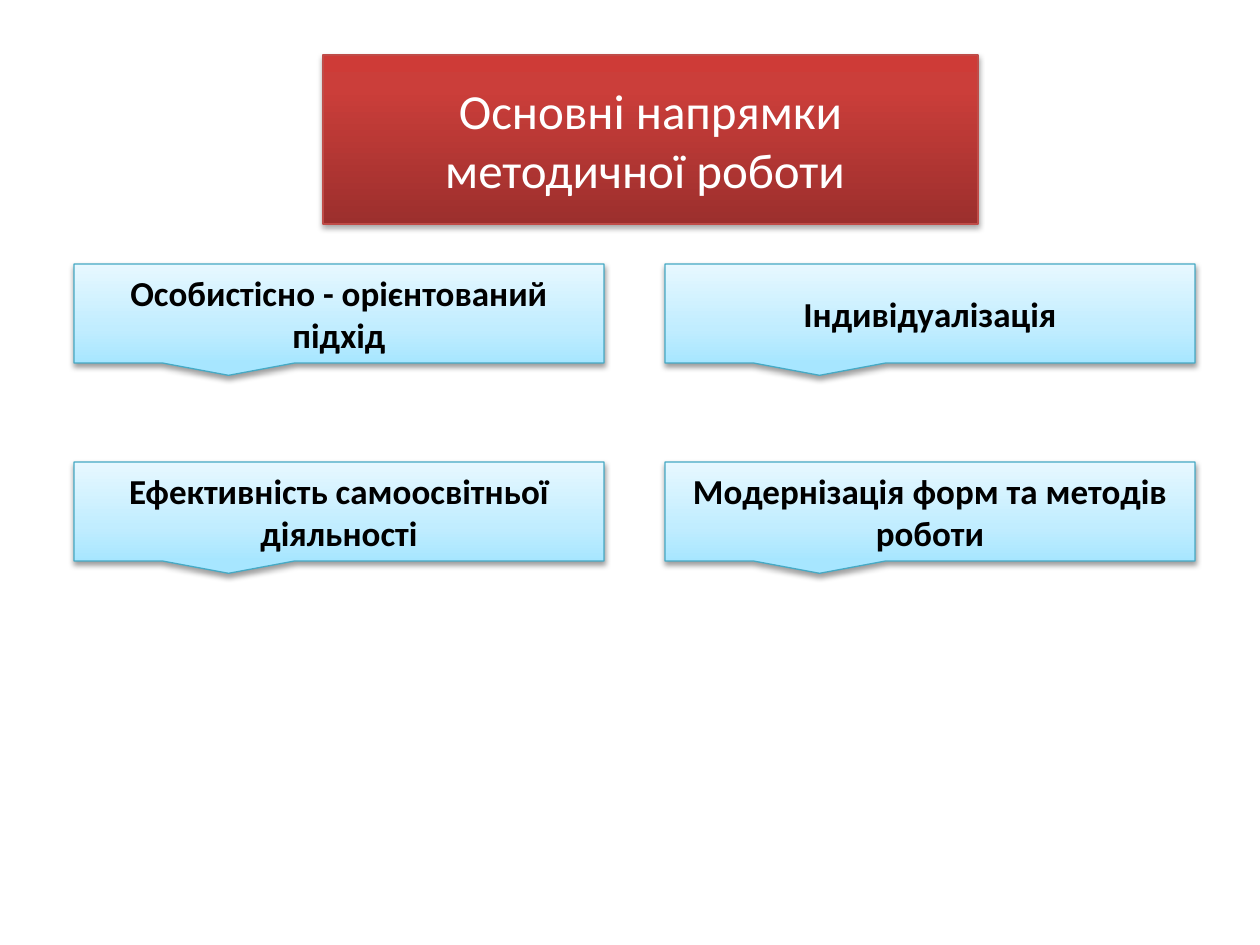
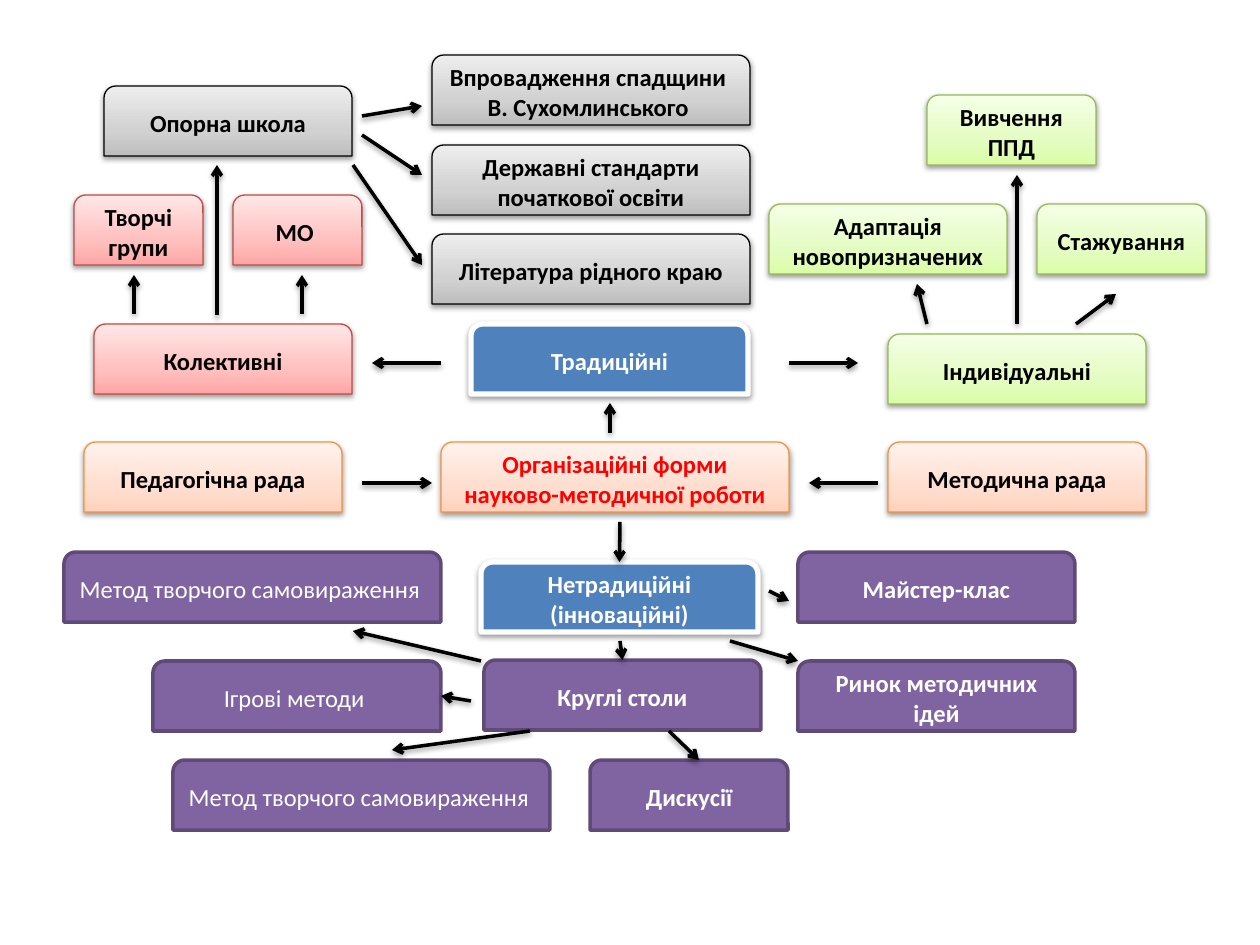
from dataclasses import dataclass, replace

from lxml import etree
from pptx import Presentation
from pptx.dml.color import RGBColor
from pptx.enum.shapes import MSO_CONNECTOR, MSO_SHAPE
from pptx.enum.text import MSO_ANCHOR, MSO_AUTO_SIZE, PP_ALIGN
from pptx.oxml.ns import qn
from pptx.util import Emu, Inches, Pt

CALLOUT = MSO_SHAPE.RECTANGULAR_CALLOUT
TAB = MSO_SHAPE.ROUND_2_SAME_RECTANGLE
STRAIGHT = MSO_CONNECTOR.STRAIGHT
MIDDLE = MSO_ANCHOR.MIDDLE
NO_AUTOFIT = MSO_AUTO_SIZE.NONE
CENTER, LEFT = PP_ALIGN.CENTER, PP_ALIGN.LEFT

FONT = "Calibri"
PX = 914400 / 126
TITLE_ONLY, BLANK = 5, 6
TOP, RIGHT_SIDE = 0, 3
NODE_HEIGHT = 70

BLACK = RGBColor(0x00, 0x00, 0x00)
WHITE = RGBColor(0xFF, 0xFF, 0xFF)
RED = RGBColor(0xFF, 0x00, 0x00)
CRIMSON = RGBColor(0xBF, 0x4C, 0x48)
TEAL = RGBColor(0x46, 0xAA, 0xC5)
ORANGE = RGBColor(0xF6, 0x92, 0x40)
OLIVE = RGBColor(0x98, 0xB9, 0x55)
BLUE = RGBColor(0x4F, 0x81, 0xBD)
PURPLE = RGBColor(0x80, 0x64, 0xA2)
DARK_PURPLE = RGBColor(0x5F, 0x4A, 0x78)


@dataclass(frozen=True)
class Style:
    """Look of a box: one fill colour or gradient stops, outline, text and shadow."""
    fill: tuple
    outline: RGBColor
    weight: float = 0.75
    ink: RGBColor = BLACK
    size: int = 14
    bold: bool = True
    align: int = CENTER
    shadow: tuple = (38, 20000)


def pale(bottom, middle, top):
    """Return the stops of a pale gradient that runs from bottom to top."""
    return ((0, bottom), (35, middle), (100, top))


BANNER = Style(((0, "9C2F2D"), (80, "CB3E3A"), (100, "CE3B37")), CRIMSON,
               ink=WHITE, size=28, bold=False, shadow=(35, 23000))
CARD = Style(pale("A7E6FF", "C1EDFF", "E7F8FF"), TEAL, size=20)
COUNCIL = Style(pale("FFD2BD", "FFDED0", "FFF2ED"), ORANGE)
CORE = replace(COUNCIL, ink=RED)
INDIVIDUAL = Style(pale("DAFDA7", "E4FCC2", "F5FFE7"), OLIVE)
COLLECTIVE = Style(pale("FFA6A5", "FFC0BF", "FFE7E7"), CRIMSON)
SCHOOL = Style(pale("BDBDBD", "D1D1D1", "EEEEEE"), BLACK)
BRANCH = Style((BLUE,), WHITE, 3, ink=WHITE)
METHOD = Style((PURPLE,), DARK_PURPLE, 2, ink=WHITE, shadow=())
PLAIN_METHOD = replace(METHOD, bold=False)
LEFT_METHOD = replace(PLAIN_METHOD, align=LEFT)

DIRECTIONS = [
    ["Особистісно - орієнтований підхід", "Індивідуалізація"],
    ["Ефективність самоосвітньої діяльності", "Модернізація форм та методів роботи"],
]

NODES = [
    (CORE, 441, 442, 348, "Організаційні форми науково-методичної роботи"),
    (COUNCIL, 84, 442, 258, "Педагогічна рада"),
    (COUNCIL, 888, 442, 258, "Методична рада"),
    (BRANCH, 471, 324, 277, "Традиційні"),
    (INDIVIDUAL, 888, 334, 258, "Індивідуальні"),
    (INDIVIDUAL, 1037, 204, 169, "Стажування"),
    (INDIVIDUAL, 769, 204, 238, "Адаптація новопризначених"),
    (INDIVIDUAL, 927, 95, 169, "Вивчення ППД"),
    (COLLECTIVE, 94, 324, 258, "Колективні"),
    (COLLECTIVE, 74, 195, 129, "Творчі групи"),
    (COLLECTIVE, 233, 195, 129, "МО "),
    (SCHOOL, 104, 86, 248, "Опорна школа"),
    (SCHOOL, 432, 55, 318, "Впровадження спадщини \nВ. Сухомлинського "),
    (SCHOOL, 432, 145, 318, "Державні стандарти початкової освіти"),
    (SCHOOL, 432, 234, 318, "Література рідного краю"),
    (METHOD, 798, 661, 277, "Ринок методичних ідей"),
    (METHOD, 798, 552, 277, "Майстер-клас"),
    (LEFT_METHOD, 173, 760, 377, "Метод творчого самовираження"),
    (LEFT_METHOD, 64, 552, 377, "Метод творчого самовираження"),
    (METHOD, 590, 760, 198, "Дискусії"),
]

ARROWS = [
    (362, 483, 432, 483), (878, 483, 809, 483),
    (789, 363, 858, 363), (441, 363, 372, 363), (610, 433, 610, 403),
    (927, 324, 917, 284), (1076, 324, 1116, 294), (1017, 324, 1017, 175),
    (134, 314, 134, 275), (302, 314, 302, 275), (217, 315, 217, 165),
    (362, 116, 422, 106), (362, 135, 422, 175), (353, 165, 422, 265),
    (481, 661, 353, 631), (769, 591, 789, 601), (730, 641, 798, 661),
    (669, 731, 699, 760), (530, 731, 392, 750),
]


def px(*lengths):
    """Turn pixel lengths into EMU."""
    return [Emu(round(length * PX)) for length in lengths]


def add_effects(shape, shadow):
    """Replace the theme shadow by a downward one, or by none."""
    effects = etree.SubElement(shape._element.spPr, qn("a:effectLst"))
    if shadow:
        opacity, distance = shadow
        outer = etree.SubElement(effects, qn("a:outerShdw"), blurRad="40000",
                                 dist=str(distance), dir="5400000", rotWithShape="0")
        colour = etree.SubElement(outer, qn("a:srgbClr"), val=str(BLACK))
        etree.SubElement(colour, qn("a:alpha"), val=str(opacity * 1000))


def fill_gradient(shape, stops):
    """Fill a shape with a vertical gradient of any number of stops."""
    shape.fill.gradient()
    shape.fill.gradient_angle = 90
    stop_list = shape._element.spPr.find(qn("a:gradFill")).find(qn("a:gsLst"))
    for old_stop in list(stop_list):
        stop_list.remove(old_stop)
    for position, colour in stops:
        stop = etree.SubElement(stop_list, qn("a:gs"), pos=str(position * 1000))
        etree.SubElement(stop, qn("a:srgbClr"), val=colour)


def write_text(box, text, style):
    """Write one paragraph per line of text in the middle of a box."""
    frame = box.text_frame
    frame.word_wrap = True
    frame.auto_size = NO_AUTOFIT
    frame.vertical_anchor = MIDDLE
    for index, line in enumerate(text.split("\n")):
        para = frame.add_paragraph() if index else frame.paragraphs[0]
        para.alignment = style.align
        span = para.add_run()
        span.text = line
        span.font.name = FONT
        span.font.size = Pt(style.size)
        span.font.bold = style.bold
        span.font.color.rgb = style.ink


def dress(box, text, style):
    """Give a box its fill, outline, shadow and text."""
    if len(style.fill) == 1:
        box.fill.solid()
        box.fill.fore_color.rgb = style.fill[0]
    else:
        fill_gradient(box, style.fill)
    box.line.color.rgb = style.outline
    box.line.width = Pt(style.weight)
    add_effects(box, style.shadow)
    write_text(box, text, style)


def add_banner_title(page, left, top, width, height, text):
    """Shape the title placeholder as a rounded banner."""
    title = page.shapes.title
    title.left, title.top, title.width, title.height = px(left, top, width, height)
    outline = etree.SubElement(title._element.spPr, qn("a:prstGeom"), prst="roundRect")
    etree.SubElement(outline, qn("a:avLst"))
    dress(title, text, BANNER)


def add_card(page, left, top, text):
    """Add a callout that names one direction."""
    dress(page.shapes.add_shape(CALLOUT, *px(left, top, 530, 99)), text, CARD)


def add_node(page, style, left, top, width, text):
    """Add a box of the scheme and return it."""
    box = page.shapes.add_shape(TAB, *px(left, top, width, NODE_HEIGHT))
    dress(box, text, style)
    return box


def add_arrow(page, start_x, start_y, end_x, end_y):
    """Add a black arrow and return it."""
    arrow = page.shapes.add_connector(STRAIGHT, *px(start_x, start_y, end_x, end_y))
    arrow.line.color.rgb = BLACK
    arrow.line.width = Pt(2)
    etree.SubElement(arrow._element.spPr.find(qn("a:ln")), qn("a:tailEnd"), type="arrow")
    add_effects(arrow, (38, 20000))
    return arrow


def build_directions(deck):
    """Build the slide with the main directions."""
    page = deck.slides.add_slide(deck.slide_layouts[TITLE_ONLY])
    add_banner_title(page, 323, 55, 655, 169, "Основні напрямки методичної роботи ")
    for row, texts in enumerate(DIRECTIONS):
        for column, text in enumerate(texts):
            add_card(page, 74 + 591 * column, 264 + 198 * row, text)


def build_forms(deck):
    """Build the scheme of the forms of work."""
    page = deck.slides.add_slide(deck.slide_layouts[BLANK])
    for node in NODES:
        add_node(page, *node)
    innovative = add_node(page, BRANCH, 481, 562, 277, "Нетрадиційні (інноваційні)")
    round_tables = add_node(page, METHOD, 484, 660, 277, "Круглі столи")
    games = add_node(page, PLAIN_METHOD, 153, 661, 288, "Ігрові методи ")
    for arrow in ARROWS:
        add_arrow(page, *arrow)
    add_arrow(page, 620, 522, 620, 562).end_connect(innovative, TOP)
    add_arrow(page, 620, 641, 622, 660).end_connect(round_tables, TOP)
    add_arrow(page, 471, 701, 441, 696).end_connect(games, RIGHT_SIDE)


def main():
    """Build and save the deck."""
    deck = Presentation()
    deck.slide_width, deck.slide_height = Inches(10), Inches(7.5)
    build_directions(deck)
    build_forms(deck)
    deck.save("out.pptx")


if __name__ == "__main__":
    main()
